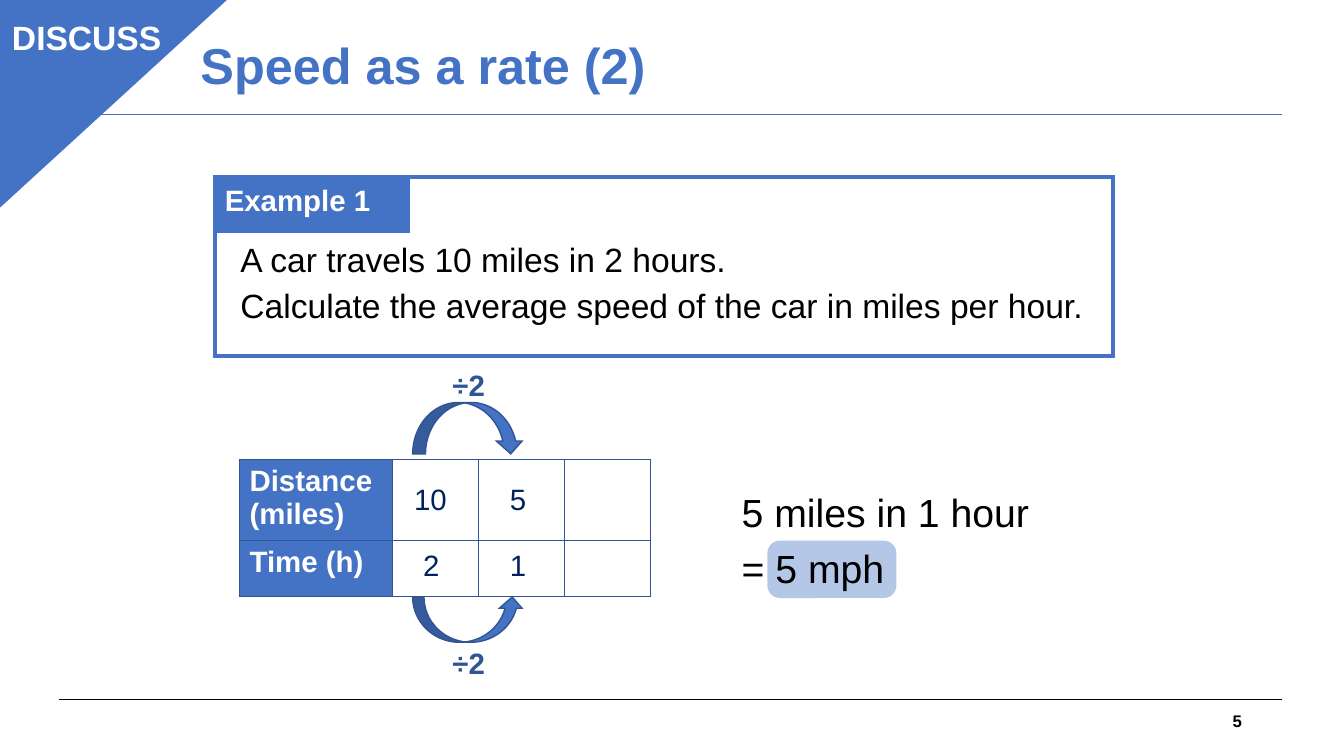
from dataclasses import dataclass
from lxml import etree
from pptx import Presentation
from pptx.dml.color import RGBColor
from pptx.enum.shapes import MSO_CONNECTOR, MSO_SHAPE
from pptx.enum.text import MSO_ANCHOR, MSO_AUTO_SIZE, PP_ALIGN
from pptx.oxml.ns import qn
from pptx.util import Pt

STRAIGHT = MSO_CONNECTOR.STRAIGHT
RECTANGLE = MSO_SHAPE.RECTANGLE
ROUNDED = MSO_SHAPE.ROUNDED_RECTANGLE
TRIANGLE = MSO_SHAPE.ISOSCELES_TRIANGLE
CURVED_ARROW = MSO_SHAPE.CURVED_UP_ARROW
TOP, MIDDLE = MSO_ANCHOR.TOP, MSO_ANCHOR.MIDDLE
LEFT, CENTER, RIGHT = PP_ALIGN.LEFT, PP_ALIGN.CENTER, PP_ALIGN.RIGHT
NO_AUTOFIT = MSO_AUTO_SIZE.NONE
TITLE_ONLY = 5


@dataclass(frozen=True)
class Theme:
    """Colours, font and type sizes of the slide."""
    font: str = "Arial"
    blue: str = "4472C4"
    dark_blue: str = "2F5597"
    arrow_edge: str = "325491"
    pale_blue: str = "B4C7E7"
    navy: str = "002060"
    black: str = "000000"
    white: str = "FFFFFF"
    title: int = 36
    answer: int = 28
    body: int = 24
    label: int = 21
    number: int = 12


THEME = Theme()


def points(*lengths):
    """Turn plain numbers into lengths in points."""
    return [Pt(length) for length in lengths]


def style_text(frame, lines, size, color, bold=False, align=LEFT, anchor=TOP, after=0):
    """Write one paragraph per line and format them all alike."""
    frame.word_wrap = True
    frame.vertical_anchor = anchor
    frame.text = "\n".join(lines)
    for paragraph in frame.paragraphs:
        paragraph.alignment = align
        paragraph.space_after = Pt(after)
        paragraph.font.name = THEME.font
        paragraph.font.size = Pt(size)
        paragraph.font.bold = bold
        paragraph.font.color.rgb = RGBColor.from_string(color)


def add_text(slide, box, lines, size, color, **options):
    """Add a wrapped text box."""
    frame = slide.shapes.add_textbox(*points(*box)).text_frame
    style_text(frame, lines, size, color, **options)


def add_shape(slide, kind, box, fill=None, line=None, width=1, flip=False):
    """Add a flat preset shape, flipped upside down on request."""
    shape = slide.shapes.add_shape(kind, *points(*box))
    shape.shadow.inherit = False
    if fill:
        shape.fill.solid()
        shape.fill.fore_color.rgb = RGBColor.from_string(fill)
    else:
        shape.fill.background()
    if line:
        shape.line.color.rgb = RGBColor.from_string(line)
        shape.line.width = Pt(width)
        etree.SubElement(shape.element.spPr.find(qn("a:ln")), qn("a:miter"), lim="800000")
    else:
        shape.line.fill.background()
    if flip:
        shape.element.spPr.find(qn("a:xfrm")).set("flipV", "1")
    return shape


def add_rule(slide, top, color):
    """Draw a thin line across the slide."""
    rule = slide.shapes.add_connector(STRAIGHT, *points(42.5, top, 916, top))
    rule.line.color.rgb = RGBColor.from_string(color)
    rule.line.width = Pt(0.75)
    etree.SubElement(rule.element.spPr, qn("a:effectLst"))


def add_title(slide, text):
    """Place and format the title placeholder."""
    title = slide.shapes.title
    title.left, title.top, title.width, title.height = points(136, 8.6, 620, 80)
    style_text(title.text_frame, [text], THEME.title, THEME.blue, bold=True, anchor=MIDDLE)
    title.text_frame.auto_size = NO_AUTOFIT
    title.text_frame.paragraphs[0].line_spacing = 0.9


def add_corner(slide, text):
    """Add the corner flag with its word."""
    corner = add_shape(slide, TRIANGLE, (-2, -1.5, 165, 151), THEME.blue, THEME.blue, flip=True)
    corner.adjustments[0] = 0
    add_text(slide, (-0.7, 8.6, 125.3, 36), [text], THEME.body, THEME.white,
             bold=True, align=CENTER)


def add_example(slide, heading, lines):
    """Add the framed question with its heading tab."""
    left, top = 153.5, 126.7
    tab = add_shape(slide, RECTANGLE, (left, top, 138.2, 38.2), THEME.blue, THEME.blue, 3)
    style_text(tab.text_frame, [heading], THEME.label, THEME.white, bold=True)
    add_shape(slide, RECTANGLE, (left, top, 641.5, 127.4), line=THEME.blue, width=3)
    add_text(slide, (164.7, 166.8, 729, 70.6), lines, THEME.body, THEME.black, after=4.5)


def border_cell(cell, color):
    """Draw a one-point border on all four sides of a cell."""
    properties = cell._tc.get_or_add_tcPr()
    for position, side in enumerate(("lnL", "lnR", "lnT", "lnB")):
        line = etree.Element(qn(f"a:{side}"), w=str(Pt(1)))
        fill = etree.SubElement(line, qn("a:solidFill"))
        etree.SubElement(fill, qn("a:srgbClr"), val=color)
        properties.insert(position, line)


def add_rate_table(slide, headings):
    """Add the ratio table: filled headings and open cells."""
    widths, heights = (109.4, 61.4, 61.4, 61.4), (57.6, 40.3)
    box = points(171.1, 328.4, sum(widths), sum(heights))
    table = slide.shapes.add_table(len(heights), len(widths), *box).table
    table.first_row = table.horz_banding = False
    for column, width in zip(table.columns, widths):
        column.width = Pt(width)
    for row, height, heading in zip(table.rows, heights, headings):
        row.height = Pt(height)
        for cell in row.cells:
            cell.fill.background()
            border_cell(cell, THEME.dark_blue)
        first = row.cells[0]
        first.fill.solid()
        first.fill.fore_color.rgb = RGBColor.from_string(THEME.blue)
        style_text(first.text_frame, [heading], THEME.label, THEME.white, bold=True)


def add_rate_values(slide, values):
    """Set the numbers over the open table cells."""
    for text, left, top in values:
        add_text(slide, (left, top, 57.6, 32.4), [text], THEME.label, THEME.navy, after=4.5)


def add_step(slide, text, arrow_top, arrow_height, text_top, flip=False):
    """Add a curved arrow between two columns with its operation."""
    add_shape(slide, CURVED_ARROW, (294.8, arrow_top, 79.2, arrow_height),
              THEME.blue, THEME.arrow_edge, flip=flip)
    add_text(slide, (316.1, text_top, 54, 32.4), [text], THEME.label, THEME.dark_blue, bold=True)


def add_answer(slide, statement, result):
    """Add the working and the highlighted result."""
    highlight = add_shape(slide, ROUNDED, (548.1, 386.2, 92.2, 41), THEME.pale_blue)
    highlight.adjustments[0] = 0.22
    for top, text in ((345.2, statement), (385.4, result)):
        add_text(slide, (522.7, top, 226, 41), [text], THEME.answer, THEME.black, after=4.5)


def main():
    """Build the slide and save it."""
    presentation = Presentation()
    presentation.slide_width, presentation.slide_height = points(960, 540)
    slide = presentation.slides.add_slide(presentation.slide_layouts[TITLE_ONLY])
    add_rule(slide, 500, THEME.black)
    add_rule(slide, 82, THEME.blue)
    add_title(slide, "Speed as a rate (2)")
    add_text(slide, (678.2, 500.4, 216, 28.8), ["5"], THEME.number, THEME.black,
             bold=True, align=RIGHT, anchor=MIDDLE)
    add_corner(slide, "DISCUSS")
    add_example(slide, "Example 1", [
        "A car travels 10 miles in 2 hours.",
        "Calculate the average speed of the car in miles per hour.",
    ])
    add_rate_table(slide, ["Distance (miles)", "Time (h)"])
    add_rate_values(slide, [("10", 288.7, 339.8), ("2", 295.2, 387.4),
                            ("1", 357.1, 387.4), ("5", 357.1, 339.8)])
    add_step(slide, "÷2", 426.4, 32.4, 457.2)
    add_step(slide, "÷2", 287.5, 36.7, 258.5, flip=True)
    add_answer(slide, "5 miles in 1 hour", "= 5 mph")
    presentation.save("out.pptx")


if __name__ == "__main__":
    main()
